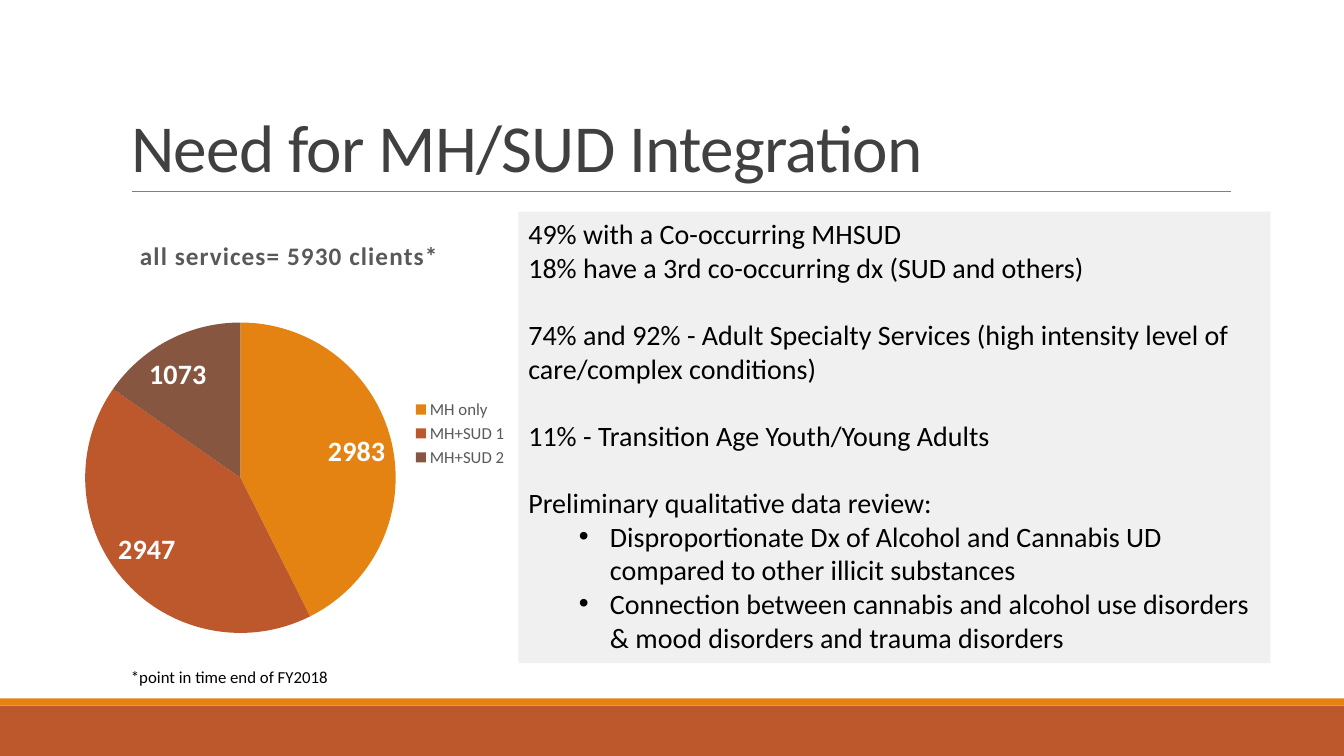
from lxml.etree import SubElement
from pptx import Presentation
from pptx.chart.data import CategoryChartData
from pptx.dml.color import RGBColor
from pptx.enum.chart import XL_CHART_TYPE, XL_LABEL_POSITION, XL_LEGEND_POSITION
from pptx.enum.shapes import MSO_CONNECTOR, MSO_SHAPE
from pptx.enum.text import MSO_ANCHOR, MSO_AUTO_SIZE, PP_ALIGN
from pptx.oxml.ns import qn
from pptx.util import Inches, Pt

PIE = XL_CHART_TYPE.PIE
BEST_FIT = XL_LABEL_POSITION.BEST_FIT
LEGEND_RIGHT = XL_LEGEND_POSITION.RIGHT
STRAIGHT = MSO_CONNECTOR.STRAIGHT
RECTANGLE = MSO_SHAPE.RECTANGLE
BOTTOM, TOP = MSO_ANCHOR.BOTTOM, MSO_ANCHOR.TOP
NO_AUTOFIT = MSO_AUTO_SIZE.NONE
LEFT, CENTER = PP_ALIGN.LEFT, PP_ALIGN.CENTER

FONT = "Calibri"
ORANGE = RGBColor(0xE4, 0x83, 0x12)
RUST = RGBColor(0xBD, 0x58, 0x2C)
BROWN = RGBColor(0x86, 0x56, 0x40)
BLACK = RGBColor(0, 0, 0)
WHITE = RGBColor(0xFF, 0xFF, 0xFF)
CHARCOAL = RGBColor(0x40, 0x40, 0x40)
SLATE = RGBColor(0x59, 0x59, 0x59)
GRAY = RGBColor(0x80, 0x80, 0x80)
PANEL = RGBColor(0xD9, 0xD9, 0xD9)

SERVICES = [("MH only", 2983, ORANGE), ("MH+SUD 1", 2947, RUST), ("MH+SUD 2", 1073, BROWN)]
FINDINGS = [
    ("49% with a Co-occurring MHSUD", 0, False),
    ("18% have a 3rd co-occurring dx (SUD and others)", 0, False),
    ("74% and 92% - Adult Specialty Services (high intensity level of care/complex conditions)", 24, False),
    ("11% - Transition Age Youth/Young Adults", 24, False),
    ("Preliminary qualitative data review:", 24, False),
    ("Disproportionate Dx of Alcohol and Cannabis UD compared to other illicit substances", 0, True),
    ("Connection between cannabis and alcohol use disorders & mood disorders and trauma disorders", 0, True),
]


def set_font(font, size, color, bold=False):
    """Apply the deck typeface with a size, colour and weight."""
    font.name, font.size, font.bold = FONT, Pt(size), bold
    font.color.rgb = color


def write(p, text, size=20, color=BLACK, bold=False, align=LEFT, before=0, line=1.0, spacing=0):
    """Write formatted text into a paragraph."""
    p.alignment, p.space_before, p.line_spacing = align, Pt(before), line
    r = p.add_run()
    r.text = text
    set_font(r.font, size, color, bold)
    if spacing:
        r.font._element.set("spc", str(round(spacing * 100)))


def set_bullet(p, bulleted):
    """Indent a paragraph with a bullet, or clear its bullet and indent."""
    pPr = p._p.get_or_add_pPr()
    margin, indent = (0.81, -0.31) if bulleted else (0, 0)
    pPr.set("marL", str(Inches(margin)))
    pPr.set("indent", str(Inches(indent)))
    if bulleted:
        SubElement(pPr, qn("a:buFont"), typeface="Arial")
        SubElement(pPr, qn("a:buChar"), char="•")
    else:
        SubElement(pPr, qn("a:buNone"))


def place(sp, x, y, w, h, anchor=TOP):
    """Move a text shape to a box given in inches and return its frame."""
    sp.left, sp.top, sp.width, sp.height = map(Inches, (x, y, w, h))
    tf = sp.text_frame
    tf.word_wrap, tf.auto_size, tf.vertical_anchor = True, NO_AUTOFIT, anchor
    return tf


def add_footer_bands(s, x, y, w, h):
    """Draw the thin orange band above the rust band."""
    stripe = 0.07
    for top, height, color in ((y + stripe, h - stripe, RUST), (y, stripe, ORANGE)):
        sp = s.shapes.add_shape(RECTANGLE, Inches(x), Inches(top), Inches(w), Inches(height))
        sp.shadow.inherit = False
        sp.fill.solid()
        sp.fill.fore_color.rgb = color
        sp.line.fill.background()


def add_heading(s, x, y, w, h):
    """Fill the title and draw the rule beneath it."""
    tf = place(s.shapes.title, x, y, w, h, BOTTOM)
    write(tf.paragraphs[0], "Need for MH/SUD Integration", size=48, color=CHARCOAL, line=0.85, spacing=-0.5)
    left, bottom = Inches(x + 0.11), Inches(y + h)
    rule = s.shapes.add_connector(STRAIGHT, left, bottom, left + Inches(10.9), bottom)
    rule.line.color.rgb, rule.line.width = GRAY, Pt(0.5)
    SubElement(rule._element.spPr, qn("a:effectLst"))


def set_layout(element, **values):
    """Give a chart element a manual layout in fractions of the chart."""
    layout = element.find(qn("c:layout"))
    if layout is None:
        layout = SubElement(element, qn("c:layout"))
        element.insert(1 if element.tag == qn("c:title") else 0, layout)
    manual = SubElement(layout, qn("c:manualLayout"))
    if "w" in values:
        SubElement(manual, qn("c:layoutTarget"), val="inner")
    for axis in "xy":
        SubElement(manual, qn(f"c:{axis}Mode"), val="edge")
    for key, value in values.items():
        SubElement(manual, qn(f"c:{key}"), val=str(value))


def add_services_pie(s, x, y, w, h):
    """Chart the clients by service need."""
    data = CategoryChartData()
    data.categories = [name for name, _, _ in SERVICES]
    data.add_series("Series 1", [count for _, count, _ in SERVICES])
    chart = s.shapes.add_chart(PIE, Inches(x), Inches(y), Inches(w), Inches(h), data).chart
    set_font(chart.font, 10, BLACK)
    chart.has_title = True
    title = chart.chart_title
    write(title.text_frame.paragraphs[0], "all services= 5930 clients*",
          size=18, color=SLATE, bold=True, align=CENTER, spacing=0.8)
    set_layout(title._element, x=0.18, y=0.05)
    chart.has_legend = True
    chart.legend.position, chart.legend.include_in_layout = LEGEND_RIGHT, False
    set_font(chart.legend.font, 12, SLATE)
    plot = chart.plots[0]
    plot.vary_by_categories = True
    set_layout(chart._chartSpace.chart.plotArea, x=0.07, y=0.25, w=0.67, h=0.7)
    for i, (_, _, color) in enumerate(SERVICES):
        fill = plot.series[0].points[i].format.fill
        fill.solid()
        fill.fore_color.rgb = color
    labels = plot.series[0].data_labels
    labels.show_value, labels.show_percentage = True, False
    labels.position = BEST_FIT
    set_font(labels.font, 20, WHITE, bold=True)


def add_findings(s, x, y, w, h):
    """Fill the body with the findings on a translucent panel."""
    body = s.placeholders[1]
    tf = place(body, x, y, w, h)
    body.fill.solid()
    body.fill.fore_color.rgb = PANEL
    color = body._element.spPr.find(qn("a:solidFill"))[0]
    SubElement(color, qn("a:alpha"), val="39000")
    for i, (text, before, bulleted) in enumerate(FINDINGS):
        p = tf.add_paragraph() if i else tf.paragraphs[0]
        write(p, text, before=before)
        set_bullet(p, bulleted)


def add_footnote(s, x, y, w, h):
    """Add the note on the date of the count."""
    tf = place(s.shapes.add_textbox(0, 0, 0, 0), x, y, w, h)
    write(tf.paragraphs[0], "*point in time end of FY2018", size=12)


def main():
    """Build and save the slide."""
    prs = Presentation()
    prs.slide_width, prs.slide_height = Inches(13.33), Inches(7.5)
    s = prs.slides.add_slide(prs.slide_layouts[1])
    add_footer_bands(s, 0, 6.93, 13.33, 0.57)
    add_heading(s, 1.2, 0.31, 11, 1.59)
    add_services_pie(s, 0.51, 2.1, 4.63, 4.4)
    add_findings(s, 5.14, 2.1, 7.46, 4.48)
    add_footnote(s, 1.2, 6.57, 2.19, 0.3)
    prs.save("out.pptx")


if __name__ == "__main__":
    main()
